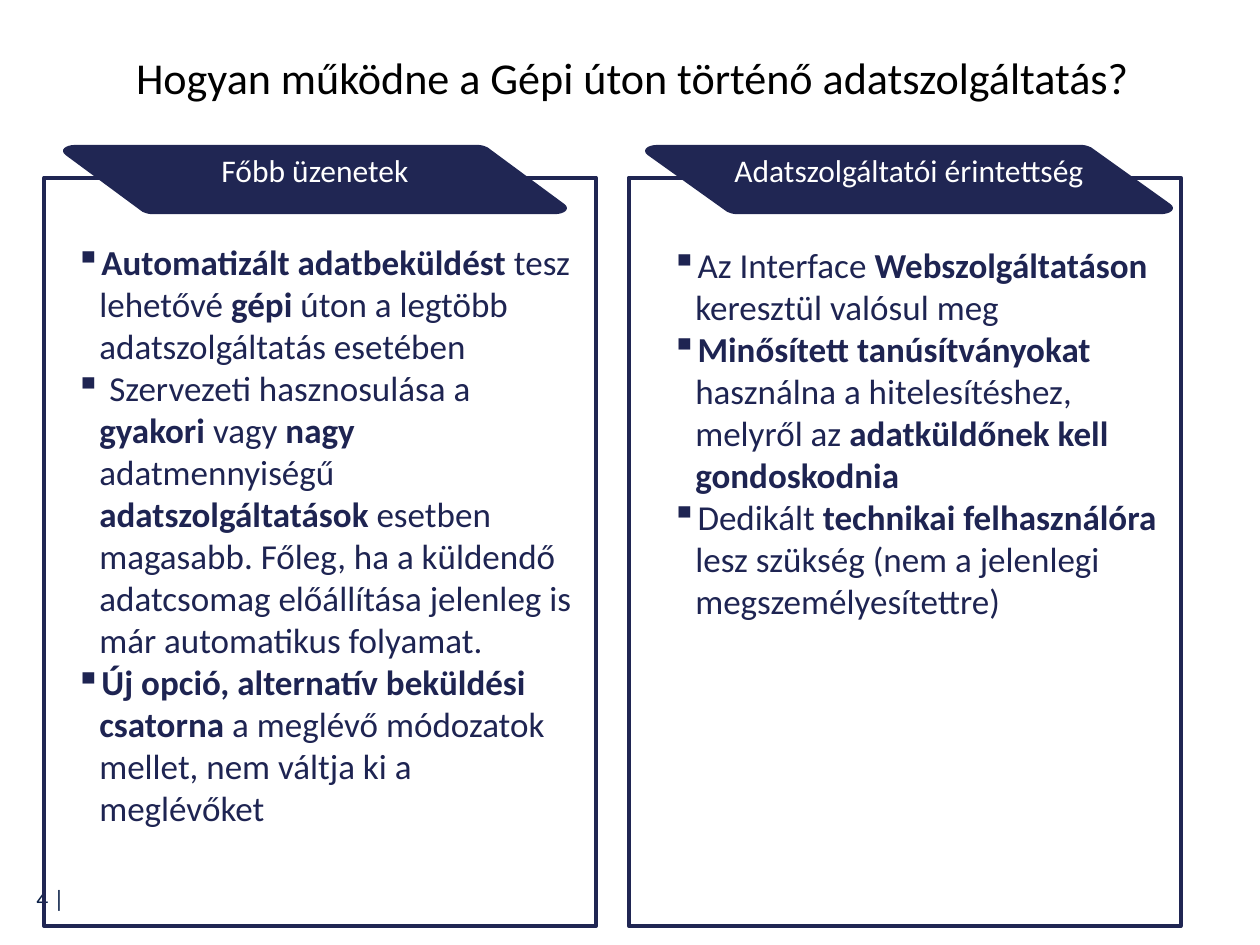
import lxml.etree
import pptx
import pptx.dml.color
import pptx.enum.shapes
import pptx.enum.text
import pptx.oxml.ns
import pptx.util

Inches = pptx.util.Inches
Pt = pptx.util.Pt
ALIGN = pptx.enum.text.PP_ALIGN
ANCHOR = pptx.enum.text.MSO_ANCHOR

COLORS = {"navy": "202653", "body": "1E2452", "number": "0C2148",
          "title": "000000", "white": "FFFFFF"}

# Text between ** marks is bold.
COLUMNS = [
    {
        "frame_left": 0.35,
        "banner": {"left": 0.47, "width": 4.06, "slant": 0.66},
        "heading": "Főbb üzenetek",
        "text_box": (0, 1.86, 4.7, 5.15),
        "bullets": [
            "**Automatizált adatbeküldést **tesz lehetővé **gépi** úton a legtöbb "
            "adatszolgáltatás esetében",
            " Szervezeti hasznosulása a **gyakori** vagy **nagy** adatmennyiségű "
            "**adatszolgáltatások** esetben magasabb. Főleg, ha a küldendő "
            "adatcsomag előállítása jelenleg is már automatikus folyamat.",
            "**Új opció, alternatív beküldési csatorna **a meglévő módozatok "
            "mellet, nem váltja ki a meglévőket",
        ],
    },
    {
        "frame_left": 4.99,
        "banner": {"left": 5.09, "width": 4.25, "slant": 0.68},
        "heading": "Adatszolgáltatói érintettség",
        "text_box": (4.73, 1.88, 4.61, 3.14),
        "bullets": [
            "Az Interface **Webszolgáltatáson** keresztül valósul meg",
            "**Minősített tanúsítványokat** használna a hitelesítéshez, melyről az "
            "**adatküldőnek kell gondoskodnia**",
            "Dedikált **technikai felhasználóra** lesz szükség (nem a jelenlegi "
            "megszemélyesítettre)",
        ],
    },
]


def rgb(name):
    return pptx.dml.color.RGBColor.from_string(COLORS[name])


def curve_points(start, control_1, control_2, end, steps=8):
    """Points along a cubic Bezier curve, without its start."""
    points = []
    for step in range(1, steps + 1):
        t = step / steps
        weights = ((1 - t) ** 3, 3 * t * (1 - t) ** 2, 3 * t * t * (1 - t), t ** 3)
        corners = (start, control_1, control_2, end)
        points.append(tuple(sum(weight * corner[axis] for weight, corner
                                in zip(weights, corners)) for axis in (0, 1)))
    return points


def banner_outline(width, height, slant):
    """Rounded parallelogram: the left half and the same half turned by 180°."""
    half = [(0.13, 0)]
    half += curve_points((0.13, 0), (0.05, 0), (0, 0.04), (0.05, 0.08))
    lower = (slant, height - 0.02)
    half.append(lower)
    half += curve_points(lower, (slant + 0.02, height - 0.01),
                         (slant + 0.05, height), (slant + 0.08, height))
    return half + [(width - x, height - y) for x, y in half]


class SlideBuilder:
    font_name = "Calibri"
    frame_top, frame_width, frame_height = 1.41, 4.38, 5.94
    banner_top, banner_height = 1.15, 0.55

    def __init__(self, slide):
        self.slide = slide

    def add_run(self, paragraph, text, size, color, bold=False):
        run = paragraph.add_run()
        run.text = text
        values = {"name": self.font_name, "size": Pt(size), "bold": bold}
        for key, value in values.items():
            setattr(run.font, key, value)
        run.font.color.rgb = rgb(color)

    def add_text_box(self, box, anchor=ANCHOR.TOP):
        shape = self.slide.shapes.add_textbox(*map(Inches, box))
        shape.text_frame.word_wrap = True
        shape.text_frame.vertical_anchor = anchor
        return shape.text_frame

    def add_title(self, text):
        title = self.slide.shapes.title
        position = {"left": 0.98, "top": 0.22, "width": 8.54, "height": 0.83}
        for key, value in position.items():
            setattr(title, key, Inches(value))
        title.text_frame.vertical_anchor = ANCHOR.MIDDLE
        title.text_frame.auto_size = pptx.enum.text.MSO_AUTO_SIZE.NONE
        paragraph = title.text_frame.paragraphs[0]
        paragraph.alignment = ALIGN.LEFT
        paragraph.line_spacing = 0.9
        self.add_run(paragraph, text, 25.2, "title")

    def add_page_number(self, text):
        frame = self.add_text_box((0.01, 6.94, 0.6, 0.37), ANCHOR.MIDDLE)
        frame.paragraphs[0].alignment = ALIGN.RIGHT
        self.add_run(frame.paragraphs[0], text, 13.5, "number")

    def add_frame(self, left):
        box = (left, self.frame_top, self.frame_width, self.frame_height)
        shape = self.slide.shapes.add_shape(
            pptx.enum.shapes.MSO_SHAPE.RECTANGLE, *map(Inches, box))
        shape.shadow.inherit = False
        shape.fill.background()
        shape.line.color.rgb = rgb("navy")
        shape.line.width = Pt(2.25)

    def add_banner(self, heading, left, width, slant):
        points = [(Inches(left + x), Inches(self.banner_top + y))
                  for x, y in banner_outline(width, self.banner_height, slant)]
        builder = self.slide.shapes.build_freeform(*points[0])
        builder.add_line_segments(points[1:], close=True)
        shape = builder.convert_to_shape()
        shape.shadow.inherit = False
        shape.fill.solid()
        shape.fill.fore_color.rgb = rgb("navy")
        shape.line.fill.background()
        shape.text_frame.word_wrap = True
        shape.text_frame.vertical_anchor = ANCHOR.TOP
        paragraph = shape.text_frame.paragraphs[0]
        paragraph.alignment = ALIGN.CENTER
        self.add_run(paragraph, heading, 18, "white")

    def add_bullets(self, box, bullets):
        frame = self.add_text_box(box)
        for index, text in enumerate(bullets):
            paragraph = frame.add_paragraph() if index else frame.paragraphs[0]
            paragraph.level = 1
            properties = paragraph._p.get_or_add_pPr()
            properties.set("marL", str(Inches(0.69)))
            properties.set("indent", str(Inches(-0.19)))
            bullet = lxml.etree.SubElement(properties, pptx.oxml.ns.qn("a:buChar"))
            bullet.set("char", "▪")
            for part, piece in enumerate(text.split("**")):
                if piece:
                    self.add_run(paragraph, piece, 20, "body", bold=part % 2 == 1)


def main():
    presentation = pptx.Presentation()
    presentation.slide_width = Inches(10)
    presentation.slide_height = Inches(7.5)
    slide = presentation.slides.add_slide(presentation.slide_layouts[5])
    builder = SlideBuilder(slide)
    builder.add_page_number("4 |")
    builder.add_title("Hogyan működne a Gépi úton történő adatszolgáltatás?")
    for column in COLUMNS:
        builder.add_frame(column["frame_left"])
        builder.add_banner(column["heading"], **column["banner"])
        builder.add_bullets(column["text_box"], column["bullets"])
    presentation.save("out.pptx")


if __name__ == "__main__":
    main()
